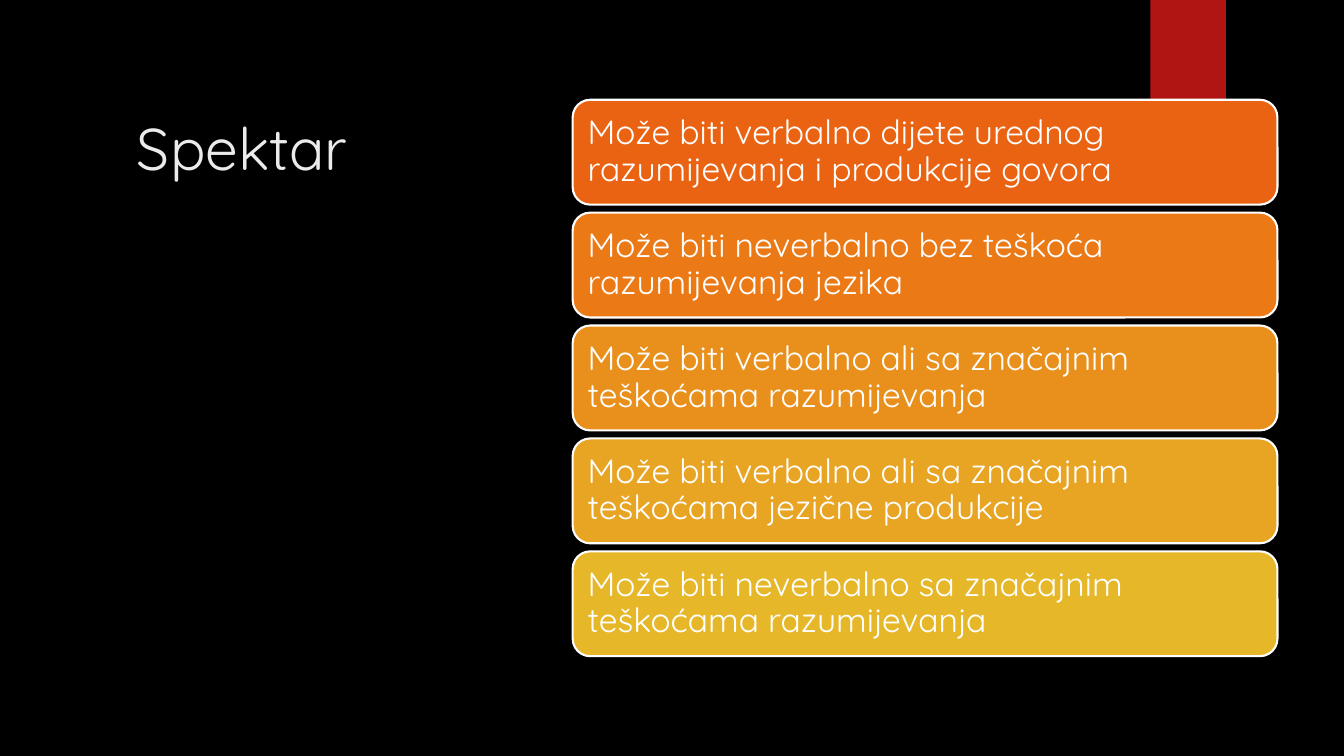
from dataclasses import dataclass

import pptx
import pptx.dml.color
import pptx.enum.shapes
import pptx.enum.text
import pptx.util

Inches = pptx.util.Inches
Shapes = pptx.enum.shapes.MSO_SHAPE
Anchor = pptx.enum.text.MSO_ANCHOR
Align = pptx.enum.text.PP_ALIGN


@dataclass(frozen=True)
class Theme:
    font: str = "Quicksand"
    background: str = "000000"
    ribbon: str = "B01513"
    title: str = "EBEBEB"
    card_text: str = "FFFFFF"
    card_line: str = "FFFFFF"
    title_size: int = 42
    card_size: int = 24
    line_width: float = 1.5


THEME = Theme()

CARDS = [
    ("Može biti verbalno dijete urednog razumijevanja i produkcije govora", "EA6312"),
    ("Može biti neverbalno bez teškoća razumijevanja jezika", "EB7A16"),
    ("Može biti verbalno ali sa značajnim teškoćama razumijevanja", "E9901C"),
    ("Može biti verbalno ali sa značajnim teškoćama jezične produkcije", "E8A423"),
    ("Može biti neverbalno sa značajnim teškoćama razumijevanja", "E6B729"),
]
CARD_TOP = 0.99
CARD_PITCH = 1.12


def set_fill(fill, color):
    fill.solid()
    fill.fore_color.rgb = pptx.dml.color.RGBColor.from_string(color)


def write_text(shape, text, size, color, anchor):
    frame = shape.text_frame
    frame.word_wrap = True
    frame.vertical_anchor = anchor
    paragraph = frame.paragraphs[0]
    paragraph.alignment = Align.LEFT
    run = paragraph.add_run()
    run.text = text
    run.font.name = THEME.font
    run.font.size = pptx.util.Pt(size)
    run.font.color.rgb = pptx.dml.color.RGBColor.from_string(color)
    return frame


def add_block(slide, kind, left, top, width, height, color):
    shape = slide.shapes.add_shape(
        kind, Inches(left), Inches(top), Inches(width), Inches(height)
    )
    shape.shadow.inherit = False
    set_fill(shape.fill, color)
    shape.line.fill.background()
    return shape


def add_title(slide, text):
    box = slide.shapes.add_textbox(
        Inches(1.26), Inches(1.06), Inches(3.22), Inches(5.29)
    )
    write_text(box, text, THEME.title_size, THEME.title, Anchor.TOP)


def add_card(slide, top, text, color):
    card = add_block(slide, Shapes.ROUNDED_RECTANGLE, 5.68, top, 6.99, 1.04, color)
    set_fill(card.line.fill, THEME.card_line)
    card.line.width = pptx.util.Pt(THEME.line_width)
    frame = write_text(card, text, THEME.card_size, THEME.card_text, Anchor.MIDDLE)
    frame.margin_left = frame.margin_right = Inches(0.1)
    frame.margin_top = frame.margin_bottom = Inches(0.1)
    frame.paragraphs[0].line_spacing = 0.9


def main():
    presentation = pptx.Presentation()
    presentation.slide_width = Inches(13.33)
    presentation.slide_height = Inches(7.5)
    slide = presentation.slides.add_slide(presentation.slide_layouts[6])
    set_fill(slide.background.fill, THEME.background)
    add_block(slide, Shapes.RECTANGLE, 11.41, 0, 0.75, 1.25, THEME.ribbon)
    add_title(slide, "Spektar")
    for index, (text, color) in enumerate(CARDS):
        add_card(slide, CARD_TOP + index * CARD_PITCH, text, color)
    presentation.save("out.pptx")


if __name__ == "__main__":
    main()
